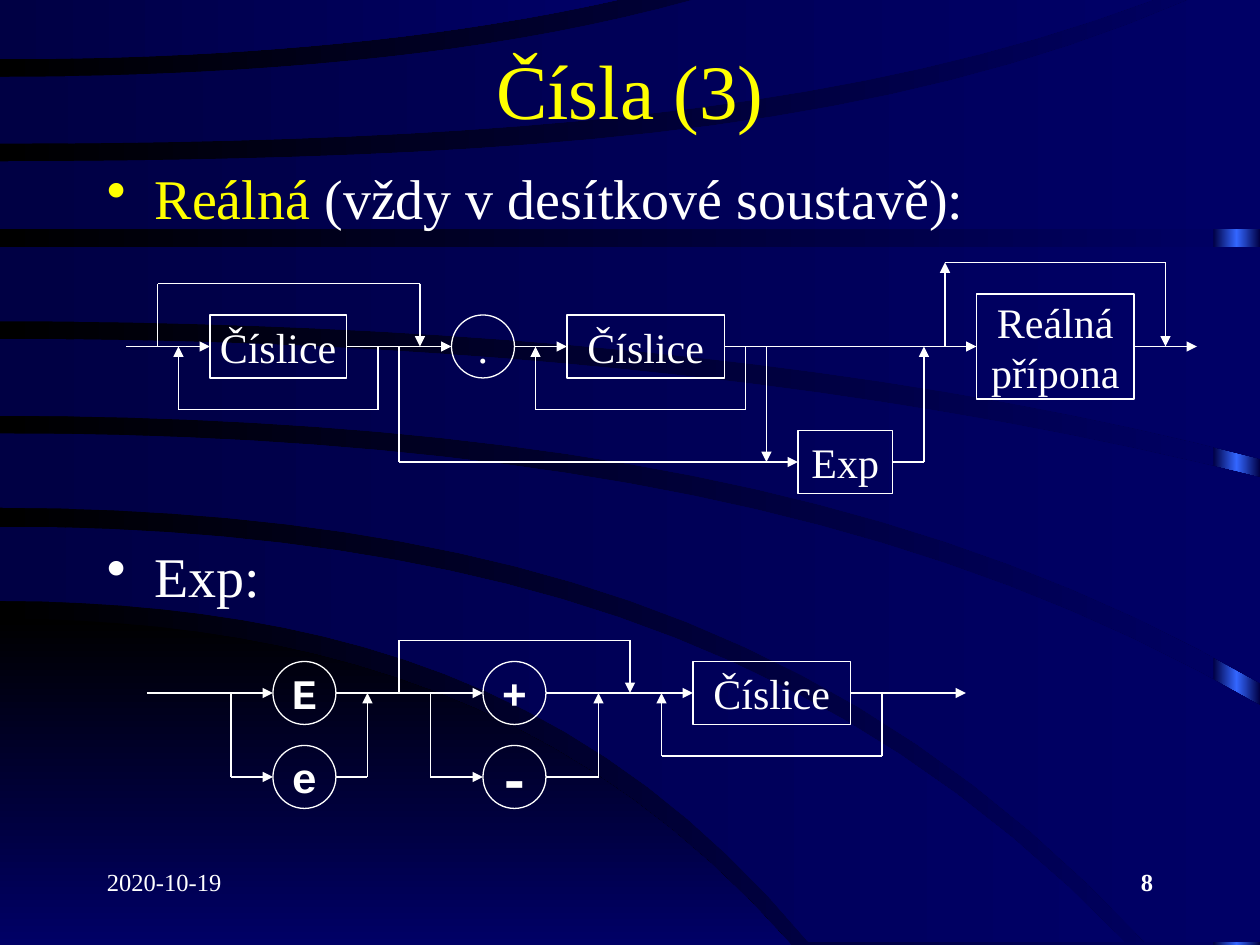
import copy

import pptx
import pptx.dml.color
import pptx.enum.shapes
import pptx.enum.text
import pptx.oxml
import pptx.oxml.ns
import pptx.util

Inches = pptx.util.Inches
SHAPES = pptx.enum.shapes.MSO_SHAPE
ALIGN = pptx.enum.text.PP_ALIGN
MIDDLE = pptx.enum.text.MSO_ANCHOR.MIDDLE
qn = pptx.oxml.ns.qn
WHITE, YELLOW = "FFFFFF", "FFFF00"
NIGHT, NAVY, BLUE, BLACK = "000044", "000066", "3366FF", "000000"
SERIF = {"name": "Times New Roman", "size": pptx.util.Pt(24), "bold": False}
MONO = {"name": "Courier New", "size": pptx.util.Pt(24), "bold": True}
GRID = 12  # diagram grid steps per inch
STEPS = 20  # segments of a curved edge

# Upper and lower edge of each band: start height, end x, end y, roundness
BANDS = [
    ((4.91, 6.28, 7.5, 0.63), (7.5, 6.28, 7.5, 1)),
    ((4.18, 8.93, 7.48, 0.6), (4.77, 6.42, 7.48, 0.58)),
    ((3.44, 10, 5.6, 0.65), (4.03, 9.09, 7.48, 0.58)),
    ((2.69, 10, 3.79, 0.86), (3.3, 10, 5.42, 0.63)),
    ((1.96, 10, 1.96, 1), (2.55, 10, 3.64, 0.8)),
    ((1.28, 9.43, 0, 0.4), (1.82, 10, 1.82, 1)),
    ((0.61, 5.5, 0, 0.75), (1.14, 9.15, 0, 0.5)),
    ((0, 4.9, 0, 1), (0.47, 4.9, 0, 0.83)),
]


def colour(value):
    return pptx.dml.color.RGBColor.from_string(value)


def set_gradient(fill, element, colours, angle=0):
    fill.gradient()
    fill.gradient_angle = angle
    stop_list = next(element.iter(qn("a:gsLst")))
    while len(stop_list) < len(colours):
        stop_list.append(copy.deepcopy(stop_list[-1]))
    for index, (stop, value) in enumerate(zip(fill.gradient_stops, colours)):
        stop.color.rgb = colour(value)
        stop.position = index / (len(colours) - 1)


def add_span(para, text, font, value=WHITE):
    span = para.add_run()
    span.text = text
    for name, setting in font.items():
        setattr(span.font, name, setting)
    span.font.color.rgb = colour(value)


def add_text(page, box, spans, size, align=ALIGN.LEFT, bold=False, bullet=False, anchor=None):
    shape = page.shapes.add_textbox(*map(Inches, box))
    frame = shape.text_frame
    frame.word_wrap = True
    frame.vertical_anchor = anchor
    para = frame.paragraphs[0]
    para.alignment = align
    for text, value in spans:
        add_span(para, text, {**SERIF, "size": pptx.util.Pt(size), "bold": bold}, value)
    if bullet:
        para.space_before = pptx.util.Pt(size * 0.2)
        props = para._p.get_or_add_pPr()
        props.set("marL", str(Inches(0.38)))
        props.set("indent", str(Inches(-0.38)))
        mark = pptx.oxml.parse_xml(f'<a:buChar {pptx.oxml.ns.nsdecls("a")} char="•"/>')
        props.append(mark)


def edge_points(start, end_x, end_y, roundness):
    points = []
    for step in range(STEPS + 1):
        part = step / STEPS
        bend = roundness * part ** 2 + (1 - roundness) * part ** 4
        points.append((end_x * part, start + (end_y - start) * bend))
    return points


def band_outline(upper, lower):
    """Join both edges through the corner where they leave the page."""
    start, upper_x, upper_y, _ = upper
    _, lower_x, lower_y, _ = lower
    pick = max if upper_y > start else min
    corner = (max(upper_x, lower_x), pick(upper_y, lower_y))
    outline = edge_points(*upper) + [corner] + edge_points(*lower)[::-1]
    return [(Inches(x), Inches(y)) for x, y in outline]


def add_backdrop(page, width, height):
    set_gradient(page.background.fill, page.element, [BLACK, NAVY])
    strip = page.shapes.add_shape(SHAPES.RECTANGLE, Inches(9.63), 0, width - Inches(9.63), height)
    set_gradient(strip.fill, strip.element, [NIGHT, BLUE, NIGHT])
    parts = [strip]
    for index, edges in enumerate(BANDS):
        first, *others = band_outline(*edges)
        builder = page.shapes.build_freeform(*first)
        builder.add_line_segments(others)
        band = builder.convert_to_shape()
        if index == 0:
            set_gradient(band.fill, band.element, [BLACK, NAVY], 270)
        else:
            set_gradient(band.fill, band.element, [NIGHT, NAVY])
        parts.append(band)
    for part in parts:
        part.line.fill.background()
        part.shadow.inherit = False


def add_diagram(page, origin, nodes, wires):
    """Place nodes and wires, in grid steps from the origin."""
    def place(point):
        return [Inches((start + step) / GRID) for start, step in zip(origin, point)]

    ports = {}
    for kind, (left, top, width, height), lines, font in nodes:
        node = page.shapes.add_shape(kind, *place((left, top)),
                                     Inches(width / GRID), Inches(height / GRID))
        node.shadow.inherit = False
        node.fill.background()
        node.line.color.rgb = colour(WHITE)
        node.line.width = pptx.util.Pt(0.75)
        frame = node.text_frame
        frame.word_wrap = False
        frame.vertical_anchor = MIDDLE
        for index, text in enumerate(lines):
            para = frame.add_paragraph() if index else frame.paragraphs[0]
            para.alignment = ALIGN.CENTER
            add_span(para, text, font)
        if kind == SHAPES.RECTANGLE:
            middle = top + height / 2
            ports[left, middle] = node, 1
            ports[left + width, middle] = node, 3

    # Every wire ends in an arrowhead
    for wire in wires:
        for start, end in zip(wire, wire[1:]):
            line = page.shapes.add_connector(pptx.enum.shapes.MSO_CONNECTOR.STRAIGHT,
                                             *place(start), *place(end))
            line.line.color.rgb = colour(WHITE)
            line.line.width = pptx.util.Pt(0.75)
            if end == wire[-1]:
                line.line._get_or_add_ln().append(pptx.oxml.parse_xml(
                    f'<a:tailEnd {pptx.oxml.ns.nsdecls("a")} type="triangle"/>'))
            line.element.spPr.append(pptx.oxml.parse_xml(
                f'<a:effectLst {pptx.oxml.ns.nsdecls("a")}/>'))
            if start in ports:
                line.begin_connect(*ports[start])
            if end in ports:
                line.end_connect(*ports[end])


def detour(start, level, end, main):
    return [(start, main), (start, level), (end, level), (end, main)]


def add_real_diagram(page, origin):
    rect, main = SHAPES.RECTANGLE, 8
    nodes = [(rect, (8, 5, 13, 6), ["Číslice"], SERIF),
             (SHAPES.OVAL, (31, 5, 6, 6), ["."], SERIF),
             (rect, (42, 5, 15, 6), ["Číslice"], SERIF),
             (rect, (64, 16, 9, 6), ["Exp"], SERIF),
             (rect, (81, 3, 15, 10), ["Reálná", "přípona"], SERIF)]
    spans = [(0, 8), (21, 31), (37, 42), (57, 81), (96, 102)]
    wires = [[(start, main), (end, main)] for start, end in spans]
    wires += [detour(24, 14, 5, main), detour(59, 14, 39, main), detour(3, 2, 28, main),
              [(26, main), (26, 19), (64, 19)], [(61, main), (61, 19)],
              [(73, 19), (76, 19), (76, main)],
              [(78, main), (78, 0)], [(78, 0), (99, 0), (99, main)]]
    add_diagram(page, origin, nodes, wires)


def add_exponent_diagram(page, origin):
    main, lower = 5, 13
    large = {**MONO, "size": pptx.util.Pt(32)}
    signs = [(12, 2, "E", MONO), (12, 10, "e", MONO), (32, 2, "+", MONO), (32, 10, "-", large)]
    nodes = [(SHAPES.OVAL, (x, y, 6, 6), [text], font) for x, y, text, font in signs]
    nodes.append((SHAPES.RECTANGLE, (52, 2, 15, 6), ["Číslice"], SERIF))
    spans = [(0, 12), (18, 32), (38, 52), (67, 78)]
    wires = [[(start, main), (end, main)] for start, end in spans]
    for split, left, right, join in [(8, 12, 18, 21), (27, 32, 38, 43)]:
        wires += [[(split, main), (split, lower), (left, lower)],
                  [(right, lower), (join, lower), (join, main)]]
    wires += [detour(24, 0, 46, main), detour(70, 11, 49, main)]
    add_diagram(page, origin, nodes, wires)


def main():
    deck = pptx.Presentation()
    deck.slide_width, deck.slide_height = Inches(10), Inches(7.5)
    page = deck.slides.add_slide(deck.slide_layouts[6])
    add_backdrop(page, deck.slide_width, deck.slide_height)
    # Footer, title and bullets
    add_text(page, (0.75, 6.83, 2.08, 0.5), [("2020-10-19", WHITE)], 14)
    add_text(page, (7.17, 6.83, 2.08, 0.5), [("8", WHITE)], 14, ALIGN.RIGHT, bold=True)
    add_text(page, (0.75, 0.33, 8.5, 0.75), [("Čísla (3)", YELLOW)], 44, ALIGN.CENTER,
             anchor=MIDDLE)
    add_text(page, (0.75, 1.25, 8.5, 0.75),
             [("Reálná", YELLOW), (" (vždy v desítkové soustavě):", WHITE)], 32, bullet=True)
    add_text(page, (0.75, 4.25, 8.5, 0.75), [("Exp:", WHITE)], 32, bullet=True)
    # Syntax diagrams
    add_real_diagram(page, (12, 25))
    add_exponent_diagram(page, (14, 61))
    deck.save("out.pptx")


if __name__ == "__main__":
    main()
